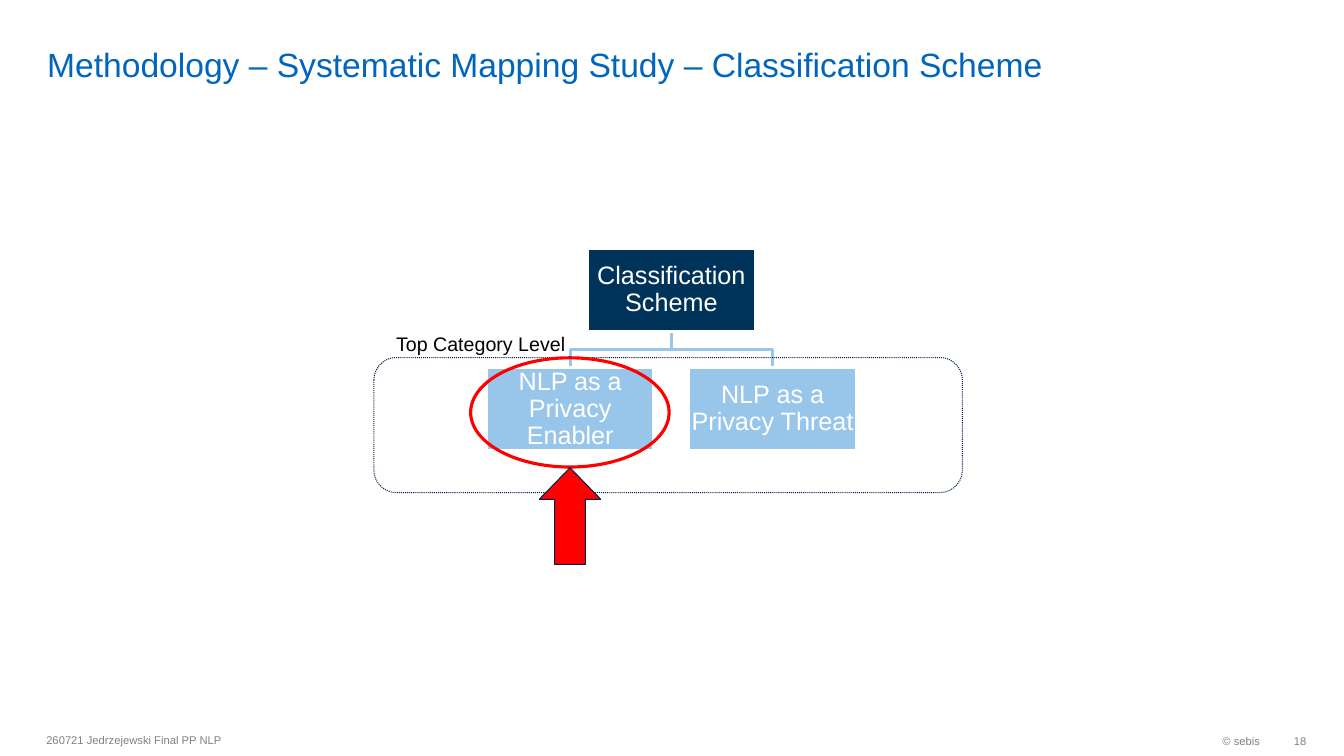
from pptx import Presentation
from pptx.dml.color import RGBColor
from pptx.enum.dml import MSO_LINE
from pptx.enum.shapes import MSO_SHAPE
from pptx.enum.text import MSO_ANCHOR, PP_ALIGN
from pptx.util import Pt

RECTANGLE, ROUNDED = MSO_SHAPE.RECTANGLE, MSO_SHAPE.ROUNDED_RECTANGLE
ELLIPSE, UP_ARROW = MSO_SHAPE.OVAL, MSO_SHAPE.UP_ARROW
LEFT, CENTER, RIGHT = PP_ALIGN.LEFT, PP_ALIGN.CENTER, PP_ALIGN.RIGHT
TOP, MIDDLE, BOTTOM = MSO_ANCHOR.TOP, MSO_ANCHOR.MIDDLE, MSO_ANCHOR.BOTTOM
DOTTED = MSO_LINE.ROUND_DOT

WHITE = RGBColor(0xFF, 0xFF, 0xFF)
BLACK = RGBColor(0x00, 0x00, 0x00)
GRAY = RGBColor(0x80, 0x80, 0x80)
RED = RGBColor(0xFF, 0x00, 0x00)
TITLE_BLUE = RGBColor(0x00, 0x65, 0xBD)
DARK_BLUE = RGBColor(0x00, 0x33, 0x59)
LIGHT_BLUE = RGBColor(0x98, 0xC6, 0xEA)
OUTLINE_BLUE = RGBColor(0x00, 0x21, 0x43)


class SlideBuilder:
    font_name = "Arial"

    def __init__(self, slide):
        self.slide = slide

    def fill_text(self, shape, text, size, color, align=LEFT, anchor=MIDDLE,
                  insets=(7.2, 3.6, 7.2, 3.6), wrap=True, spacing=1.0):
        frame = shape.text_frame
        left, top, right, bottom = insets
        frame_format = {
            "margin_left": Pt(left), "margin_top": Pt(top),
            "margin_right": Pt(right), "margin_bottom": Pt(bottom),
            "vertical_anchor": anchor, "word_wrap": wrap,
        }
        for name, value in frame_format.items():
            setattr(frame, name, value)
        paragraph = frame.paragraphs[0]
        paragraph.alignment = align
        paragraph.line_spacing = spacing
        run = paragraph.add_run()
        run.text = text
        run.font.color.rgb = color
        for name, value in {"name": self.font_name, "size": Pt(size)}.items():
            setattr(run.font, name, value)

    def text(self, box, text, size, color, **options):
        shape = self.slide.shapes.add_textbox(*map(Pt, box))
        self.fill_text(shape, text, size, color, **options)

    def paint(self, shape, fill, line, width):
        shape.shadow.inherit = False
        if fill is None:
            shape.fill.background()
        else:
            shape.fill.solid()
            shape.fill.fore_color.rgb = fill
        shape.line.color.rgb = line
        shape.line.width = Pt(width)

    def shape(self, kind, box, fill, line, width, adjustments=()):
        shape = self.slide.shapes.add_shape(kind, *map(Pt, box))
        self.paint(shape, fill, line, width)
        for index, value in enumerate(adjustments):
            shape.adjustments[index] = value
        return shape

    def node(self, box, text, fill):
        shape = self.shape(RECTANGLE, box, fill, WHITE, 2)
        self.fill_text(shape, text, 18, WHITE, align=CENTER,
                       insets=(0.9, 0.9, 0.9, 0.9), spacing=0.9)

    def branch(self, points, color, width):
        start, *others = [(Pt(x), Pt(y)) for x, y in points]
        builder = self.slide.shapes.build_freeform(*start)
        builder.add_line_segments(others, close=False)
        self.paint(builder.convert_to_shape(), None, color, width)


def main():
    presentation = Presentation()
    presentation.slide_width, presentation.slide_height = Pt(960), Pt(540)
    slide = presentation.slides.add_slide(presentation.slide_layouts[6])
    builder = SlideBuilder(slide)

    # Title and footer
    builder.text((26.6, 3.6, 833.8, 56.9),
                 "Methodology – Systematic Mapping Study – Classification Scheme",
                 24, TITLE_BLUE, anchor=BOTTOM, insets=(7.2, 0, 7.2, 0))
    builder.text((738.7, 517.7, 168.5, 23), "© sebis", 8, GRAY, align=RIGHT)
    builder.text((907.2, 517.7, 25.9, 23), "18", 8, GRAY, align=RIGHT,
                 insets=(7.2, 3.6, 0, 3.6))
    builder.text((26, 517.2, 453.6, 23), "260721 Jedrzejewski Final PP NLP",
                 8, GRAY)

    # Classification tree
    node_width, node_height = 119.4, 59.7
    root_center, root_top, child_top = 479.6, 177.4, 262.4
    root_bottom = root_top + node_height
    middle = (root_bottom + child_top) / 2
    children = [(-72.3, "NLP as a Privacy Enabler"),
                (72.3, "NLP as a Privacy Threat")]
    for offset, _ in children:
        center = root_center + offset
        builder.branch([(root_center, root_bottom), (root_center, middle),
                        (center, middle), (center, child_top)], LIGHT_BLUE, 2)
    nodes = [(0, root_top, "Classification Scheme", DARK_BLUE)]
    nodes += [(offset, child_top, label, LIGHT_BLUE) for offset, label in children]
    for offset, top, label, fill in nodes:
        left = root_center + offset - node_width / 2
        builder.node((left, top, node_width, node_height), label, fill)

    # Category level frame
    frame = builder.shape(ROUNDED, (267.1, 255.4, 420.3, 96.5), None,
                          OUTLINE_BLUE, 0.75, [0.167])
    frame.line.dash_style = DOTTED
    builder.text((275.8, 229.7, 135.4, 31.7), "Top Category Level", 14, BLACK,
                 anchor=TOP, insets=(7.2, 7.2, 7.2, 7.2), wrap=False)

    # Highlight of the chosen category
    builder.shape(ELLIPSE, (336.2, 255.6, 141.8, 78), None, RED, 2.25)
    builder.shape(UP_ARROW, (385.2, 334.1, 43.9, 69.1), RED, OUTLINE_BLUE,
                  0.75, [0.5, 0.514])

    presentation.save("out.pptx")


if __name__ == "__main__":
    main()
